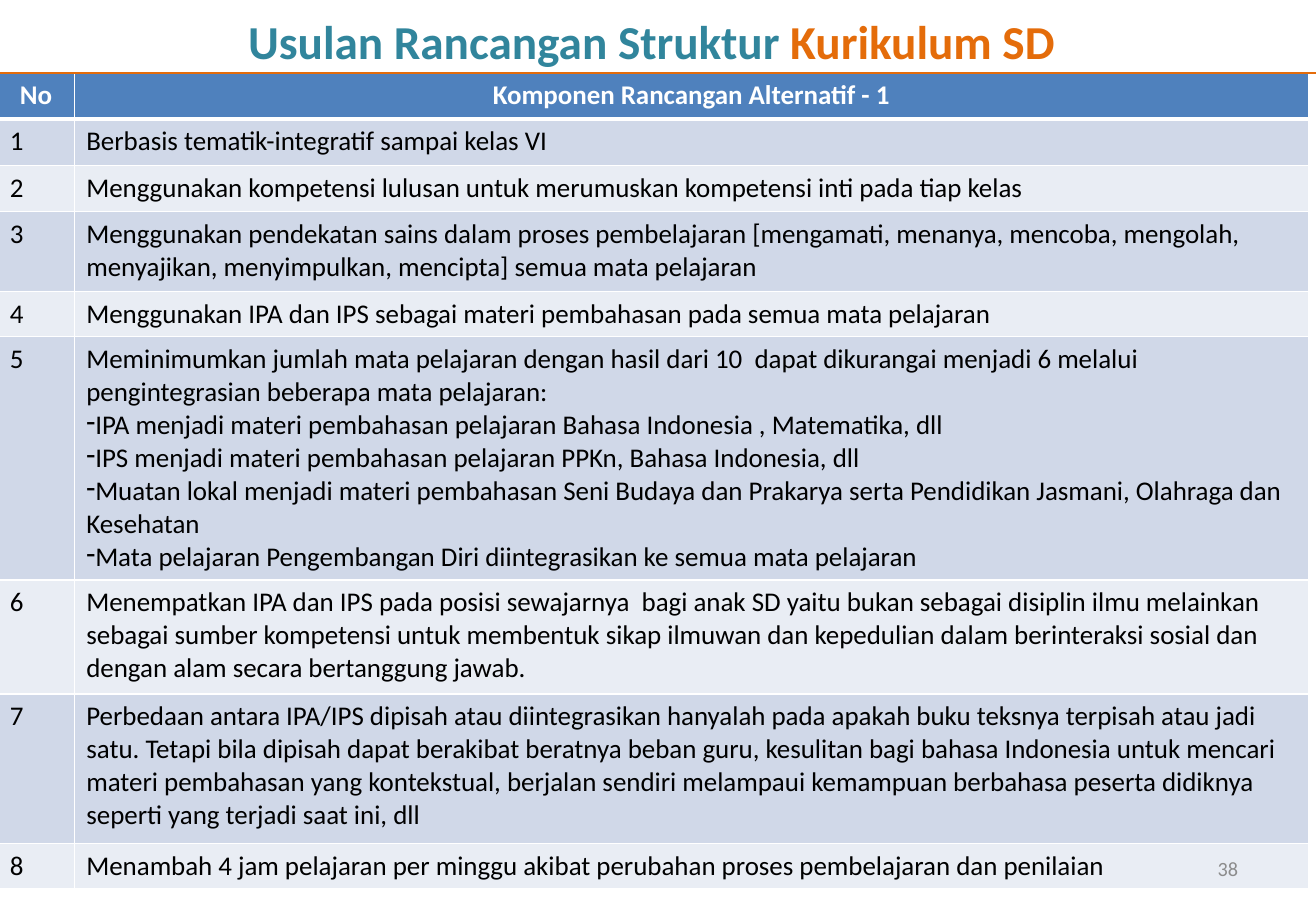
from dataclasses import dataclass

from lxml import etree
from pptx import Presentation
from pptx.dml.color import RGBColor
from pptx.enum.shapes import MSO_CONNECTOR
from pptx.enum.text import MSO_ANCHOR, PP_ALIGN
from pptx.oxml.ns import qn
from pptx.util import Pt

STRAIGHT = MSO_CONNECTOR.STRAIGHT
MIDDLE = MSO_ANCHOR.MIDDLE
LEFT, CENTER, RIGHT = PP_ALIGN.LEFT, PP_ALIGN.CENTER, PP_ALIGN.RIGHT


@dataclass(frozen=True)
class Theme:
    font: str = "Calibri"
    title_size: int = 28
    table_size: int = 16
    number_size: int = 12
    teal: str = "31859C"
    orange: str = "E46C0A"
    header: str = "4F81BD"
    bands: tuple = ("D0D8E8", "E9EDF4")
    white: str = "FFFFFF"
    black: str = "000000"
    gray: str = "8C8C8C"


theme = Theme()


def style(paragraph, size, color, bold, align):
    paragraph.alignment = align
    font = paragraph.font
    font.name, font.size, font.bold = theme.font, Pt(size), bold
    font.color.rgb = RGBColor.from_string(color)


def add_border(cell, side, width):
    border = etree.Element(qn(f"a:{side}"), w=str(Pt(width)))
    fill = etree.SubElement(border, qn("a:solidFill"))
    etree.SubElement(fill, qn("a:srgbClr"), val=theme.white)
    return border


components = [
    (27.4, ["Berbasis tematik-integratif sampai kelas VI"]),
    (27.4, ["Menggunakan kompetensi lulusan untuk merumuskan kompetensi inti pada tiap kelas"]),
    (47.5, ["Menggunakan pendekatan sains dalam proses pembelajaran [mengamati, menanya, mencoba, "
            "mengolah, menyajikan, menyimpulkan, mencipta] semua mata pelajaran"]),
    (26.7, ["Menggunakan IPA dan IPS sebagai materi pembahasan pada semua mata pelajaran"]),
    (143.9, ["Meminimumkan jumlah mata pelajaran dengan hasil dari 10  dapat dikurangai menjadi 6 "
             "melalui pengintegrasian beberapa mata pelajaran:",
             "IPA menjadi materi pembahasan pelajaran Bahasa Indonesia , Matematika, dll",
             "IPS menjadi materi pembahasan pelajaran PPKn, Bahasa Indonesia, dll",
             "Muatan lokal menjadi materi pembahasan Seni Budaya dan Prakarya serta Pendidikan "
             "Jasmani, Olahraga dan Kesehatan",
             "Mata pelajaran Pengembangan Diri diintegrasikan ke semua mata pelajaran"]),
    (67.7, ["Menempatkan IPA dan IPS pada posisi sewajarnya  bagi anak SD yaitu bukan sebagai "
            "disiplin ilmu melainkan sebagai sumber kompetensi untuk membentuk sikap ilmuwan dan "
            "kepedulian dalam berinteraksi sosial dan dengan alam secara bertanggung jawab."]),
    (88.6, ["Perbedaan antara IPA/IPS dipisah atau diintegrasikan hanyalah pada apakah buku teksnya "
            "terpisah atau jadi satu. Tetapi bila dipisah dapat berakibat beratnya beban guru, "
            "kesulitan bagi bahasa Indonesia untuk mencari materi pembahasan yang kontekstual, "
            "berjalan sendiri melampaui kemampuan berbahasa peserta didiknya seperti yang terjadi "
            "saat ini, dll"]),
    (26.7, ["Menambah 4 jam pelajaran per minggu akibat perubahan proses pembelajaran dan penilaian"]),
]
rows = [(27.4, ["No"], ["Komponen Rancangan Alternatif - 1"])]
rows += [(height, [str(number)], lines) for number, (height, lines) in enumerate(components, 1)]

presentation = Presentation()
presentation.slide_width, presentation.slide_height = Pt(780), Pt(540)
slide = presentation.slides.add_slide(presentation.slide_layouts[6])

table_height = sum(row[0] for row in rows)
curriculum = slide.shapes.add_table(
    len(rows), 2, Pt(-1.4), Pt(43.2), Pt(776.9), Pt(table_height)).table
for column, width in zip(curriculum.columns, (45.4, 731.5)):
    column.width = Pt(width)

for index, (height, *contents) in enumerate(rows):
    curriculum.rows[index].height = Pt(height)
    is_header = index == 0
    background = theme.header if is_header else theme.bands[(index - 1) % 2]
    for cell, lines in zip(curriculum.rows[index].cells, contents):
        cell.text = "\n".join(lines)
        for position, paragraph in enumerate(cell.text_frame.paragraphs):
            style(paragraph, theme.table_size, theme.white if is_header else theme.black,
                  is_header, CENTER if is_header else LEFT)
            if position:
                properties = paragraph._p.get_or_add_pPr()
                properties.set("marL", "0")
                properties.set("indent", "0")
                bullet = etree.Element(qn("a:buChar"), char="-")
                properties.insert(0, bullet)
        cell.fill.solid()
        cell.fill.fore_color.rgb = RGBColor.from_string(background)
        widths = {"lnL": 1, "lnR": 1, "lnT": 3 if index == 1 else 1, "lnB": 3 if is_header else 1}
        for order, (side, width) in enumerate(widths.items()):
            cell._tc.get_or_add_tcPr().insert(order, add_border(cell, side, width))

page_number = slide.shapes.add_textbox(Pt(558.7), Pt(500.4), Pt(182.2), Pt(28.8)).text_frame
page_number.word_wrap = True
page_number.vertical_anchor = MIDDLE
page_number.text = "38"
style(page_number.paragraphs[0], theme.number_size, theme.gray, False, RIGHT)

title = slide.shapes.add_textbox(Pt(-1.4), Pt(3.6), Pt(781.2), Pt(41)).text_frame
title.word_wrap = True
title.vertical_anchor = MIDDLE
heading = title.paragraphs[0]
style(heading, theme.title_size, theme.teal, True, CENTER)
heading.add_run().text = "Usulan Rancangan Struktur "
level = heading.add_run()
level.text = "Kurikulum SD "
level.font.color.rgb = RGBColor.from_string(theme.orange)

title_rule = slide.shapes.add_connector(STRAIGHT, Pt(0), Pt(43.2), Pt(780), Pt(43.2))
title_rule.line.color.rgb = RGBColor.from_string(theme.orange)
title_rule.line.width = Pt(0.75)
etree.SubElement(title_rule._element.spPr, qn("a:effectLst"))

presentation.save("out.pptx")
